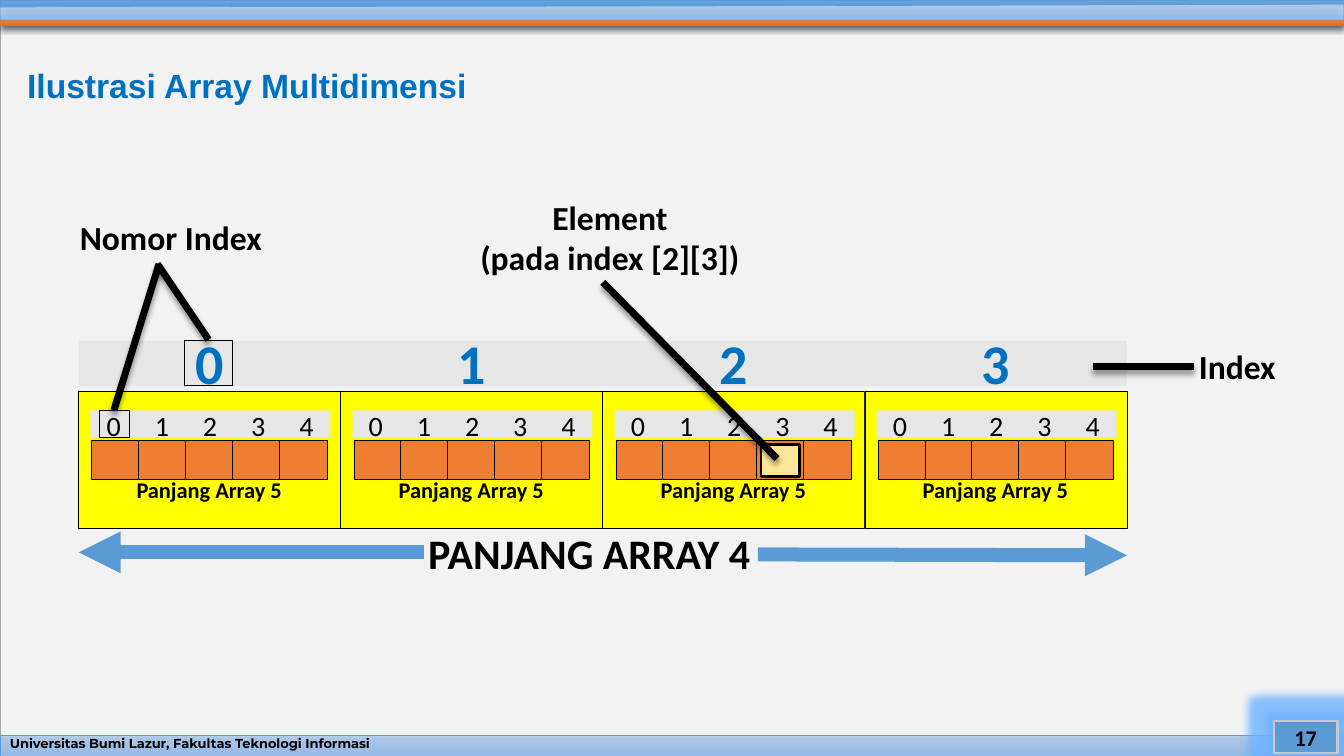
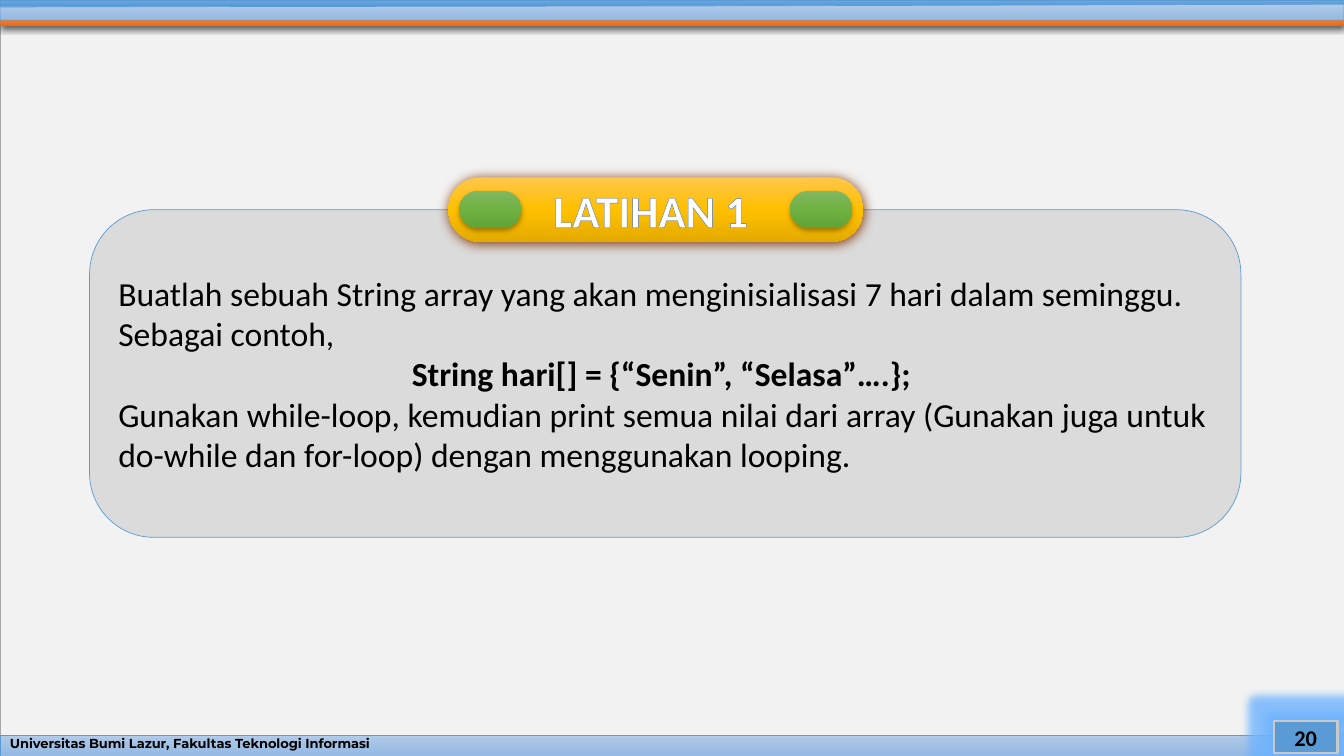
"""Build two slides on arrays: a labelled diagram and an exercise."""
from copy import deepcopy
from dataclasses import dataclass, replace
from typing import Any, Optional

from lxml.etree import SubElement
from pptx import Presentation
from pptx.dml.color import RGBColor as RGB
from pptx.enum.shapes import MSO_CONNECTOR as Link, MSO_SHAPE as Form
from pptx.enum.text import MSO_ANCHOR as Anchor, MSO_AUTO_SIZE as Auto, PP_ALIGN as Align
from pptx.oxml.ns import qn
from pptx.util import Pt

BLACK, WHITE = RGB(0, 0, 0), RGB(255, 255, 255)
PAPER, EDGE, PANEL = RGB(0xF2, 0xF2, 0xF2), RGB(0xA5, 0xA5, 0xA5), RGB(0xDB, 0xDB, 0xDB)
BLUE, AZURE, INK = RGB(0x5B, 0x9B, 0xD5), RGB(0x00, 0x70, 0xC0), RGB(0x44, 0x72, 0xC4)
SILVER, STRIP, BROWN = RGB(0xC9, 0xC9, 0xC9), RGB(0xE7, 0xE6, 0xE6), RGB(0x83, 0x3C, 0x0B)
YELLOW, ORANGE, CREAM = RGB(0xFF, 0xFF, 0), RGB(0xED, 0x7D, 0x31), RGB(0xFF, 0xE6, 0x99)
GLOW = RGB(0x6F, 0xB4, 0xFF)

Blend = tuple[RGB, RGB, RGB]
SKY: Blend = (RGB(0xB1, 0xCB, 0xE9), RGB(0xA3, 0xC1, 0xE5), RGB(0x93, 0xB9, 0xE4))
SEA: Blend = (RGB(0x71, 0xA6, 0xDB), RGB(0x55, 0x9B, 0xDB), RGB(0x44, 0x8A, 0xCA))
FIRE: Blend = (RGB(0xF1, 0x8C, 0x57), RGB(0xF6, 0x7B, 0x28), RGB(0xE5, 0x6C, 0x19))
GOLD: Blend = (RGB(0xFF, 0xC6, 0x4B), RGB(0xFF, 0xC0, 0), RGB(0xE3, 0xAB, 0))
LEAF: Blend = (RGB(0x81, 0xB8, 0x61), RGB(0x6F, 0xB2, 0x42), RGB(0x62, 0xA3, 0x36))

WIDE, HIGH = 960, 540
LEFT, STEP, BLOCKS, CELLS = 56.2, 187.2, 4, 5


@dataclass(frozen=True)
class Box:
    """A frame in points."""
    x: float
    y: float
    w: float
    h: float

    def pts(self) -> tuple[Pt, Pt, Pt, Pt]:
        """Give the four lengths."""
        return Pt(self.x), Pt(self.y), Pt(self.w), Pt(self.h)


@dataclass(frozen=True)
class Style:
    """The look of one paragraph."""
    size: float
    color: RGB = BLACK
    bold: bool = True
    face: str = "Calibri"
    align: Align = Align.CENTER
    space: float = 1.0


@dataclass(frozen=True)
class Shade:
    """A soft shadow that falls straight down."""
    color: RGB
    alpha: int
    blur: float
    drop: float


@dataclass(frozen=True)
class Look:
    """The fill, line and shadow of a shape."""
    fill: Optional[RGB | Blend] = None
    line: Optional[RGB] = None
    width: float = 0.5
    shade: Optional[Shade] = None


@dataclass(frozen=True)
class Stroke:
    """A straight line between two points."""
    x1: float
    y1: float
    x2: float
    y2: float


HEAD = Style(24, AZURE, face="Arial", align=Align.LEFT, space=0.9)
FOOT = Style(9.3, face="Montserrat", align=Align.LEFT, space=0.7)
PAGE, NOTE, TOTAL = Style(16), Style(24), Style(30)
DIGIT, INDEX = Style(20, bold=False), Style(40, AZURE)
PROSE = Style(24, bold=False, align=Align.LEFT)
BANNER = Style(32, WHITE)
OUTLINE = Look(line=BLACK)
CAST = Shade(BLACK, 40, 4, 3)


def tint(node: Any, color: RGB, alpha: int = 100) -> None:
    """Add a colour to an XML node."""
    part = SubElement(node, qn("a:srgbClr"), val=str(color))
    SubElement(part, qn("a:alpha"), val=str(alpha * 1000))


def cast(shape: Any, shade: Optional[Shade]) -> Any:
    """Replace the theme shadow and return the effect list."""
    fx = SubElement(shape.element.spPr, qn("a:effectLst"))
    if shade:
        node = SubElement(fx, qn("a:outerShdw"), blurRad=str(Pt(shade.blur)),
                          dist=str(Pt(shade.drop)), dir="5400000", rotWithShape="0")
        tint(node, shade.color, shade.alpha)
    return fx


def paint(shape: Any, look: Look) -> Any:
    """Apply a look and return the effect list."""
    if look.fill is None:
        shape.fill.background()
    elif isinstance(look.fill, RGB):
        shape.fill.solid()
        shape.fill.fore_color.rgb = look.fill
    else:
        shape.fill.gradient()
        shape.fill.gradient_angle = 270
        stops = shape.element.spPr.find(".//" + qn("a:gsLst"))
        stops.insert(1, deepcopy(stops[0]))
        for stop, color, place in zip(shape.fill.gradient_stops, look.fill, (0, 0.5, 1)):
            stop.color.rgb = color
            stop.position = place
    if look.line is None:
        shape.line.fill.background()
    else:
        shape.line.color.rgb = look.line
        shape.line.width = Pt(look.width)
    return cast(shape, look.shade)


def write(shape: Any, *lines: tuple[str, Style]) -> None:
    """Set styled lines in a shape, one run to a paragraph."""
    frame = shape.text_frame
    frame.word_wrap = True
    frame.auto_size = Auto.NONE
    frame.vertical_anchor = Anchor.MIDDLE
    for i, (words, style) in enumerate(lines):
        para = frame.add_paragraph() if i else frame.paragraphs[0]
        para.alignment = style.align
        para.line_spacing = style.space
        run = para.add_run()
        run.text = words
        font = run.font
        font.name, font.size, font.bold = style.face, Pt(style.size), style.bold
        font.color.rgb = style.color


def draw(slide: Any, box: Box, look: Look, curve: float = 0) -> Any:
    """Add a plain or rounded box."""
    form = Form.ROUNDED_RECTANGLE if curve else Form.RECTANGLE
    shape = slide.shapes.add_shape(form, *box.pts())
    if curve:
        shape.adjustments[0] = curve
    paint(shape, look)
    return shape


def label(slide: Any, box: Box, style: Style, *lines: str) -> None:
    """Add a text box."""
    write(slide.shapes.add_textbox(*box.pts()), *((words, style) for words in lines))


def trace(slide: Any, dots: list[tuple[float, float]], look: Look) -> None:
    """Add a closed outline."""
    spots = [(Pt(x), Pt(y)) for x, y in dots]
    pen = slide.shapes.build_freeform(*spots[0], scale=1.0)
    pen.add_line_segments(spots[1:], close=True)
    paint(pen.convert_to_shape(), look)


def link(slide: Any, way: Stroke, color: RGB, width: float,
         shade: Optional[Shade] = None, arrow: bool = False) -> None:
    """Add a line, with an arrowhead if asked."""
    line = slide.shapes.add_connector(
        Link.STRAIGHT, Pt(way.x1), Pt(way.y1), Pt(way.x2), Pt(way.y2))
    line.line.color.rgb = color
    line.line.width = Pt(width)
    if arrow:
        SubElement(line.element.spPr.find(qn("a:ln")), qn("a:tailEnd"), type="triangle")
    cast(line, shade)


def title(slide: Any, box: Box, words: str, style: Style) -> Any:
    """Place and fill the title."""
    shape = slide.shapes.title
    shape.left, shape.top, shape.width, shape.height = box.pts()
    write(shape, (words, style))
    return shape


def bands(deck: Any, slide: Any) -> None:
    """Draw the shared bands and move them to the master."""
    kept = len(slide.shapes)
    foot = Box(0, 525, WIDE, 15)
    draw(slide, Box(0, 3, WIDE, 537), Look(PAPER, EDGE))
    trace(slide, [(WIDE, 18.6), (0, 18.6), (2, 9.2), (WIDE, 9)],
          Look(FIRE, shade=Shade(BLACK, 63, 4.5, 1.5)))
    draw(slide, foot, Look(SKY, BLUE))
    draw(slide, Box(0, 0, WIDE, 8), Look(SEA, BLUE))
    trace(slide, [(WIDE, 14.4), (0, 14.4), (0, 5), (540, 4.2), (WIDE, 3)], Look(SKY, BLUE))
    label(slide, foot, FOOT, "Universitas Bumi Lazur, Fakultas Teknologi Informasi")
    tree = deck.slide_master.element.cSld.spTree
    for i, shape in enumerate(list(slide.shapes)[kept:]):
        shape.element.nvSpPr.cNvPr.set("id", str(20 + i))
        tree.insert(2 + i, shape.element)


def page(slide: Any, number: int) -> None:
    """Add the glowing page number."""
    shape = slide.shapes.add_shape(Form.RECTANGLE, *Box(910, 515, 45.4, 23).pts())
    fx = paint(shape, Look(BLUE, SILVER, 1.5))
    tint(SubElement(fx, qn("a:glow"), rad=str(Pt(12))), GLOW, 80)
    write(shape, (str(number), PAGE))


def block(slide: Any, rank: int) -> None:
    """Draw one inner array with its indexes."""
    x = LEFT + rank * STEP
    draw(slide, Box(x, 279.3, STEP, 98), Look(YELLOW, BLACK))
    draw(slide, Box(x + 8.4, 293.2, 171.4, 19.4), Look(STRIP))
    for i in range(CELLS):
        draw(slide, Box(x + 9.4 + 33.5 * i, 314.4, 34.4, 28), Look(ORANGE, BLACK))
        label(slide, Box(x + 7.9 + 34.4 * i, 290, 34.4, 28), DIGIT, str(i))
    label(slide, Box(x, 238.2, STEP, 41), INDEX, str(rank))
    label(slide, Box(x + 9, 340, 168.5, 20), PAGE, "Panjang Array 5")


def diagram(slide: Any) -> None:
    """Fill the slide with the array of arrays."""
    title(slide, Box(12.2, 38.2, 925, 49), "Ilustrasi Array Multidimensi", HEAD)
    draw(slide, Box(LEFT, 243.4, BLOCKS * STEP, 32.4), Look(STRIP))
    for rank in range(BLOCKS):
        block(slide, rank)
    for way in (Stroke(303, 394.5, 56.2, 394.5), Stroke(541.4, 396, 805, 396.7)):
        link(slide, way, BLUE, 10, arrow=True)
    label(slide, Box(268, 381, 306, 28), TOTAL, "PANJANG ARRAY 4")
    draw(slide, Box(543.6, 317.5, 27.4, 23), Look(CREAM, BLACK, 2))
    label(slide, Box(44.6, 155.5, 154.8, 28), NOTE, "Nomor Index")
    label(slide, Box(328.3, 155.5, 214.6, 28), NOTE, "Element", "(pada index [2][3])")
    label(slide, Box(829.4, 247.7, 108.7, 28), NOTE, "Index")
    for way in (Stroke(853, 262, 780.5, 262), Stroke(430.6, 201.6, 555, 327.6),
                Stroke(112.5, 188.6, 149, 242.6), Stroke(113.6, 188.6, 81.4, 293)):
        link(slide, way, BLACK, 5, CAST)
    for box in (Box(131.8, 242.8, 34.5, 32.4), Box(71.2, 293, 21, 19.4)):
        draw(slide, box, OUTLINE)


def task(slide: Any) -> None:
    """Fill the slide with the exercise."""
    panel = draw(slide, Box(64, 149.8, 822.4, 234), Look(PANEL, BLUE), 0.196)
    write(panel,
          ("Buatlah sebuah String array yang akan menginisialisasi 7 hari dalam seminggu.", PROSE),
          ("Sebagai contoh,", PROSE),
          ("String hari[] = {“Senin”, “Selasa”….}; ", replace(PROSE, bold=True, align=Align.CENTER)),
          ("Gunakan while-loop, kemudian print semua nilai dari array (Gunakan juga untuk "
           "do-while dan for-loop) dengan menggunakan looping.", PROSE))
    pill = Box(320.2, 126.7, 296.6, 46)
    draw(slide, pill, Look(GOLD, shade=Shade(BROWN, 100, 8.5, 1)), 0.5)
    for x in (328.2, 564.4):
        draw(slide, Box(x, 136.3, 44.2, 26.6), Look(LEAF, shade=Shade(BLACK, 32, 3.5, 2.2)), 0.5)
    head = title(slide, pill, "LATIHAN 1 ", BANNER)
    for look in head.element.iter(qn("a:rPr")):
        line = SubElement(look, qn("a:ln"), w=str(Pt(0.8)))
        tint(SubElement(line, qn("a:solidFill")), INK)
        look.insert(0, line)
    slide.shapes.element.append(head.element)


def main() -> None:
    """Build and save the deck."""
    deck = Presentation()
    deck.slide_width, deck.slide_height = Pt(WIDE), Pt(HIGH)
    for fill, number in ((diagram, 17), (task, 20)):
        slide = deck.slides.add_slide(deck.slide_layouts[5])
        if len(deck.slides) == 1:
            bands(deck, slide)
        page(slide, number)
        fill(slide)
    deck.save("out.pptx")


if __name__ == "__main__":
    main()
